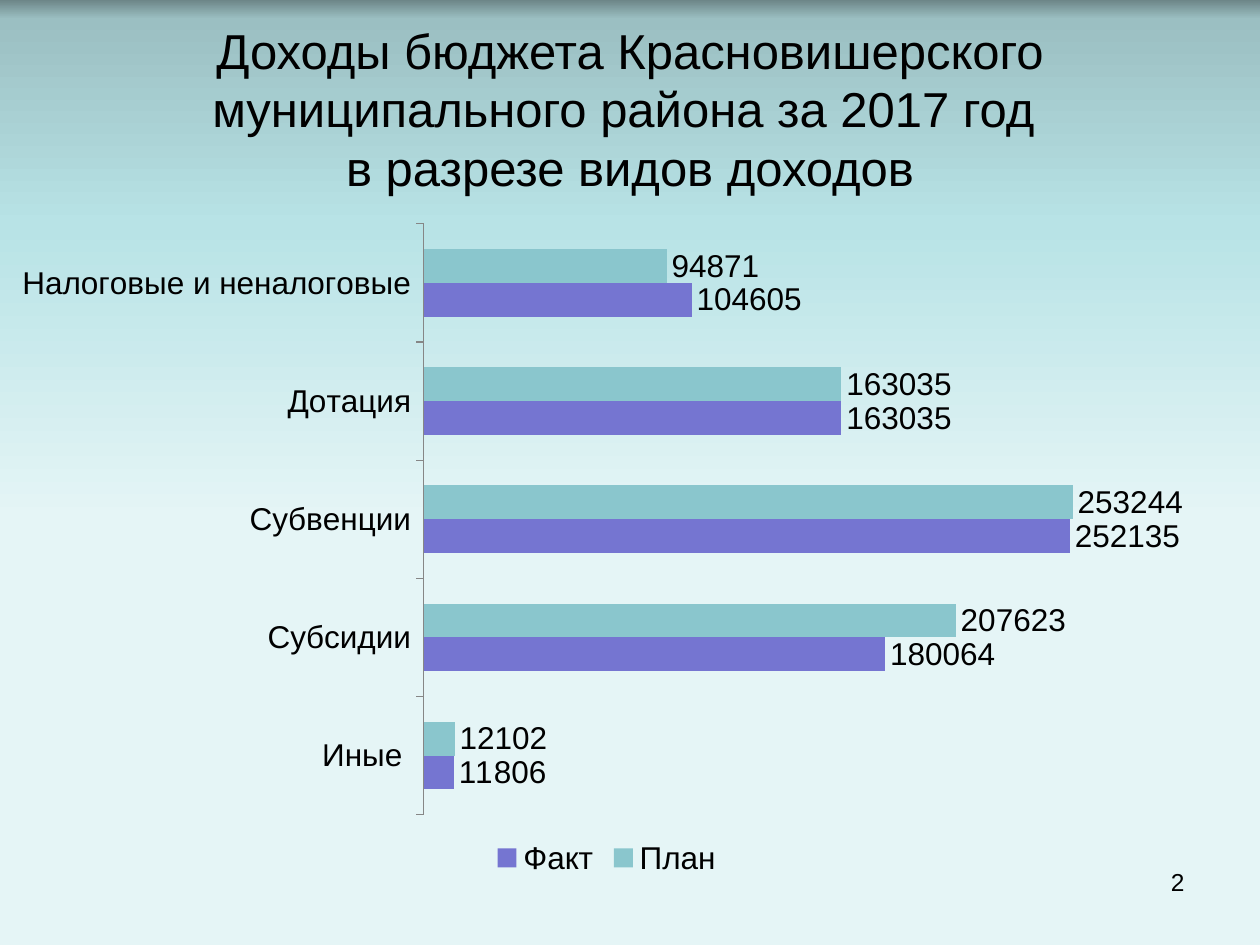
from lxml import etree
from pptx import Presentation
from pptx import util as u
from pptx.chart.data import CategoryChartData
from pptx.dml.color import RGBColor
from pptx.enum import chart as ch
from pptx.enum import text
from pptx.oxml import parse_xml
from pptx.oxml.ns import nsdecls, qn

COLORS = {"text": "000000", "plan": "8AC6CD", "fact": "7575D1", "axis": "868686"}
BACKGROUND = [(0, "6D8688"), (2, "9BBFC2"), (24, "B8E3E6"), (55, "E5F5F6"), (100, "E5F5F6")]
CATEGORIES = ["Налоговые и неналоговые", "Дотация", "Субвенции", "Субсидии", "Иные "]
SERIES = [
    ("План", "plan", [94871, 163035, 253244, 207623, 12102]),
    ("Факт", "fact", [104605, 163035, 252135, 180064, 11806]),
]


class SlideBuilder:
    """Holds the style and the current slide, and adds each kind of element."""

    font = "Arial"

    def __init__(self, deck):
        self.slide = deck.slides.add_slide(deck.slide_layouts[5])

    def color(self, name):
        return RGBColor.from_string(COLORS[name])

    def style(self, font, size):
        font.name = self.font
        font.size = u.Pt(size)
        font.color.rgb = self.color("text")

    def place(self, shape, left, top, width, height):
        shape.left, shape.top = u.Inches(left), u.Inches(top)
        shape.width, shape.height = u.Inches(width), u.Inches(height)

    def background(self, stops):
        fill = self.slide.background.fill
        fill.gradient()
        fill.gradient_angle = 270
        stop_list = next(self.slide.element.iter(qn("a:gsLst")))
        for stop in list(stop_list):
            stop_list.remove(stop)
        for position, color in stops:
            stop_list.append(parse_xml(
                f'<a:gs {nsdecls("a")} pos="{position * 1000}"><a:srgbClr val="{color}"/></a:gs>'))

    def title(self, words, size, *place):
        title = self.slide.shapes.title
        self.place(title, *place)
        frame = title.text_frame
        frame.text = words
        frame.word_wrap = True
        frame.vertical_anchor = text.MSO_ANCHOR.MIDDLE
        para = frame.paragraphs[0]
        para.alignment = text.PP_ALIGN.CENTER
        for span in para.runs:
            self.style(span.font, size)

    def label(self, words, size, *place):
        box = self.slide.shapes.add_textbox(*map(u.Inches, place))
        frame = box.text_frame
        frame.word_wrap = True
        frame.text = words
        para = frame.paragraphs[0]
        para.alignment = text.PP_ALIGN.RIGHT
        self.style(para.runs[0].font, size)

    def bar_chart(self, categories, series, size, *place):
        data = CategoryChartData(number_format="General")
        data.categories = categories
        for name, _, values in series:
            data.add_series(name, values)
        chart = self.slide.shapes.add_chart(
            ch.XL_CHART_TYPE.BAR_CLUSTERED, *map(u.Inches, place), data).chart
        self.style(chart.font, size)
        chart.has_title = False
        chart.has_legend = True
        chart.legend.position = ch.XL_LEGEND_POSITION.BOTTOM
        chart.legend.include_in_layout = False

        axis = chart.category_axis
        axis.reverse_order = True
        axis.major_tick_mark = ch.XL_TICK_MARK.OUTSIDE
        axis.format.line.color.rgb = self.color("axis")
        chart.value_axis.visible = False
        chart.value_axis.has_major_gridlines = False
        chart.value_axis.minimum_scale = 0
        chart.value_axis.maximum_scale = 300000

        plot = chart.plots[0]
        plot.gap_width = 150
        plot.overlap = 0
        plot.vary_by_categories = False
        for bars, (_, color, _) in zip(plot.series, series):
            bars.format.fill.solid()
            bars.format.fill.fore_color.rgb = self.color(color)
            labels = bars.data_labels
            labels.show_value = True
            labels.position = ch.XL_LABEL_POSITION.OUTSIDE_END
            self.style(labels.font, size)
        self.plot_area(chart, x=0.35, y=0.02, w=0.63, h=0.88)

    def plot_area(self, chart, **sizes):
        area = next(chart.element.iter(qn("c:plotArea")))
        for old in area.findall(qn("c:layout")):
            area.remove(old)
        layout = parse_xml(f'<c:layout {nsdecls("c")}><c:manualLayout/></c:layout>')
        values = {"layoutTarget": "inner", "xMode": "edge", "yMode": "edge", **sizes}
        for name, value in values.items():
            etree.SubElement(layout[0], qn(f"c:{name}")).set("val", str(value))
        area.insert(0, layout)


def main():
    deck = Presentation()
    deck.slide_width, deck.slide_height = u.Inches(10), u.Inches(7.5)
    page = SlideBuilder(deck)
    page.background(BACKGROUND)
    page.title("Доходы бюджета Красновишерского муниципального района за 2017 год \v"
               "в разрезе видов доходов", 28, 0.5, 0.17, 9, 1.38)
    page.bar_chart(CATEGORIES, SERIES, 18, -0.03, 1.67, 9.69, 5.33)
    page.label("2", 14, 7.17, 6.83, 2.33, 0.52)
    deck.save("out.pptx")


if __name__ == "__main__":
    main()
